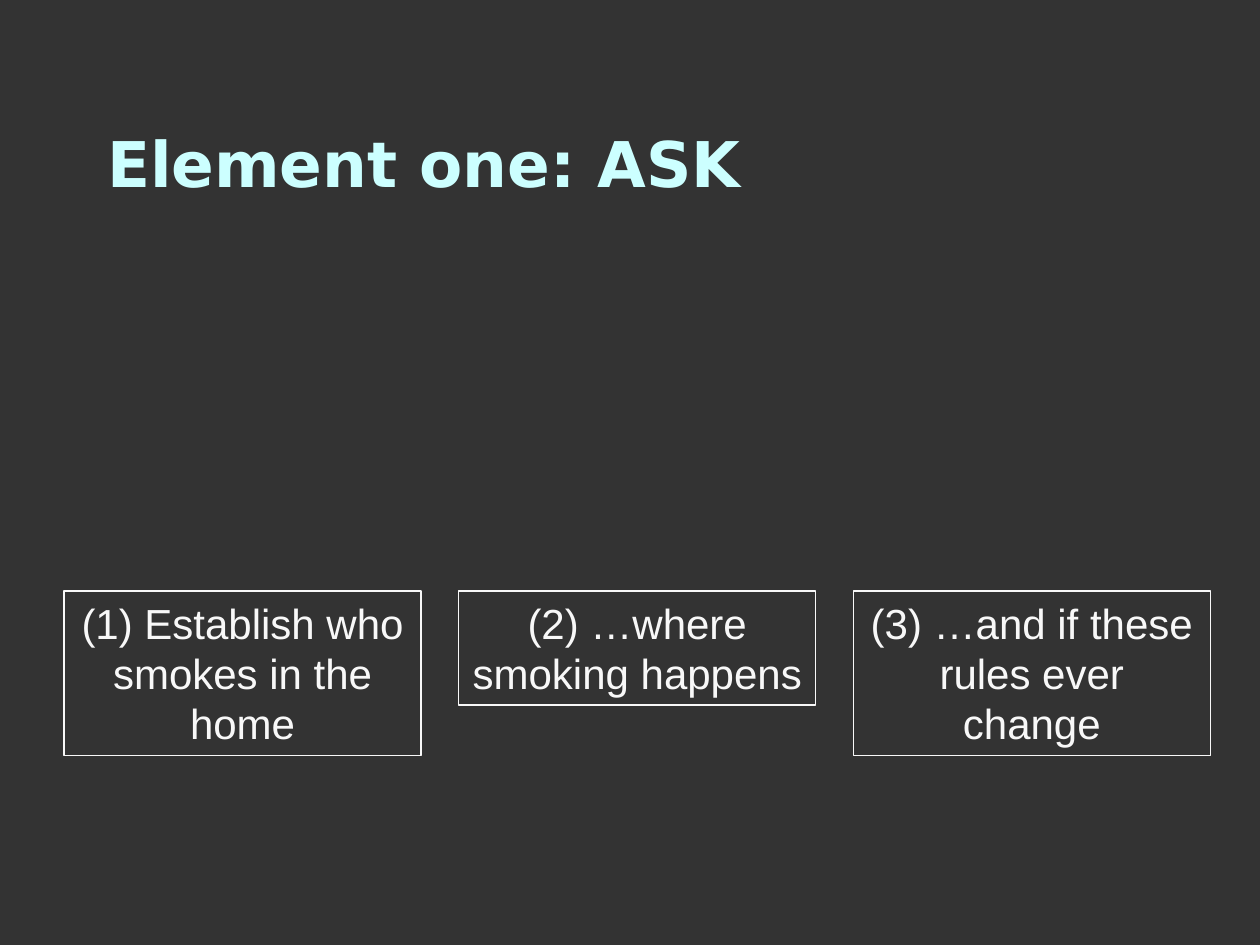
from pptx import Presentation
from pptx.dml.color import RGBColor
from pptx.enum import shapes, text
from pptx.util import Pt

TITLE = "Element one: ASK"
# text and number of lines it takes
STEPS = [
    ("(1) Establish who smokes in the home", 3),
    ("(2) …where smoking happens", 2),
    ("(3) …and if these rules ever change", 3),
]
BACKGROUND, TITLE_COLOR, TEXT_COLOR = "333333", "CCFFFF", "F8F8F8"
LEFT, TOP, WIDTH, PITCH = 36.6, 337.7, 204, 225.5
LINE_HEIGHT, PADDING = 28.9, 7.4


def color(value):
    return RGBColor.from_string(value)


def style(p, name, size, value, align, bold=False):
    p.alignment = align
    p.font.name = name
    p.font.size = Pt(size)
    p.font.bold = bold
    p.font.color.rgb = color(value)


def add_step(s, left, label, lines):
    box = s.shapes.add_shape(
        shapes.MSO_SHAPE.RECTANGLE, Pt(left), Pt(TOP),
        Pt(WIDTH), Pt(lines * LINE_HEIGHT + PADDING))
    box.shadow.inherit = False
    box.fill.background()
    box.line.color.rgb = color(TEXT_COLOR)
    box.line.width = Pt(0.75)
    tf = box.text_frame
    tf.word_wrap = True
    tf.auto_size = text.MSO_AUTO_SIZE.SHAPE_TO_FIT_TEXT
    tf.vertical_anchor = text.MSO_ANCHOR.TOP
    tf.text = label
    style(tf.paragraphs[0], "Arial", 24, TEXT_COLOR, text.PP_ALIGN.CENTER)


prs = Presentation()
prs.slide_width, prs.slide_height = Pt(720), Pt(540)
s = prs.slides.add_slide(prs.slide_layouts[5])
s.background.fill.solid()
s.background.fill.fore_color.rgb = color(BACKGROUND)

title = s.shapes.title
title.left, title.top, title.width, title.height = Pt(54), Pt(48), Pt(612), Pt(90)
tf = title.text_frame
tf.text = TITLE
tf.vertical_anchor = text.MSO_ANCHOR.MIDDLE
style(tf.paragraphs[0], "DejaVu Sans", 36, TITLE_COLOR, text.PP_ALIGN.LEFT, bold=True)

for i, (label, lines) in enumerate(STEPS):
    add_step(s, LEFT + i * PITCH, label, lines)

prs.save("out.pptx")
